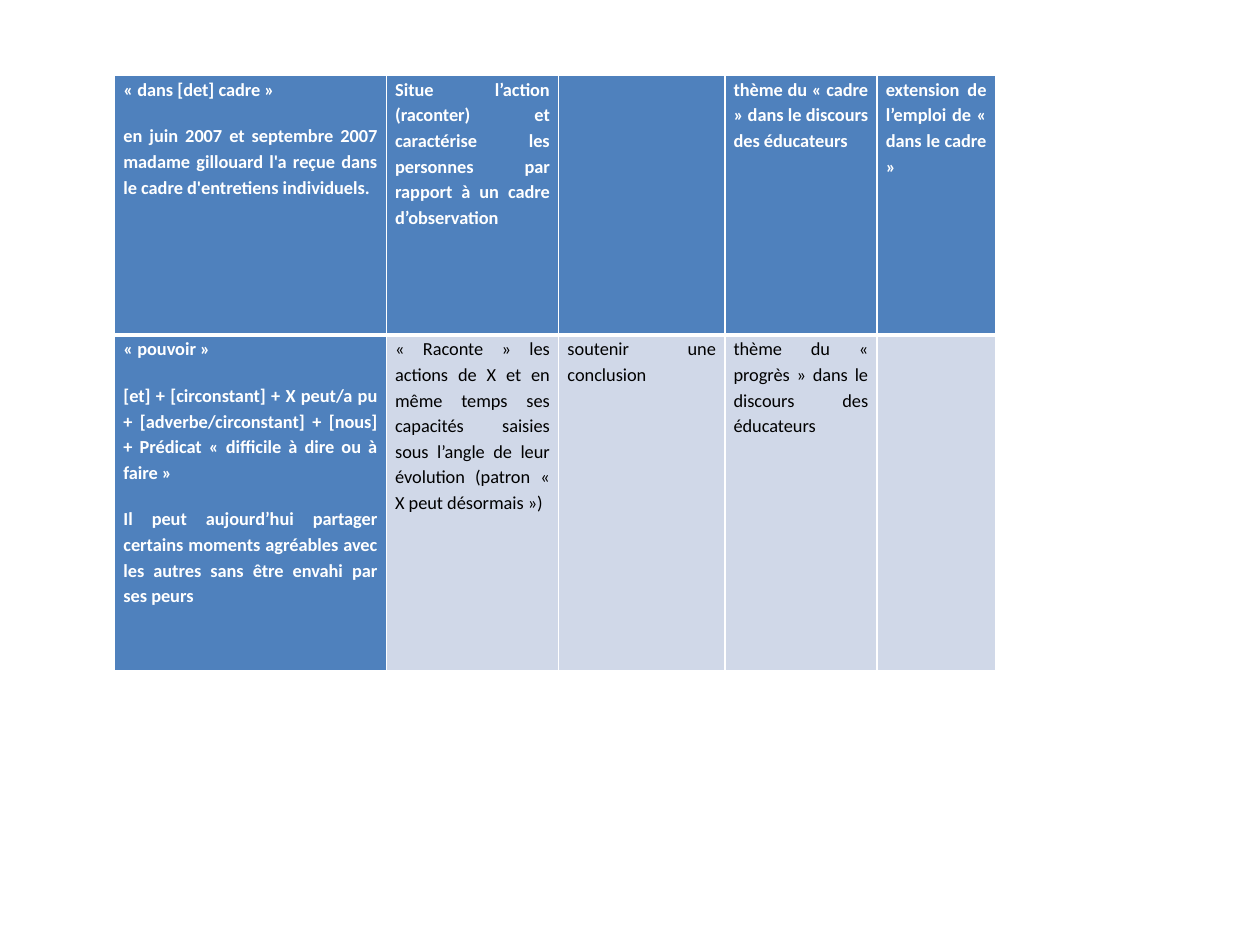
from lxml import etree
from pptx import Presentation
from pptx import util as u
from pptx.dml import color
from pptx.enum import text
from pptx.oxml import ns

BLUE, PALE, WHITE, BLACK = "4F81BD", "D0D8E8", "FFFFFF", "000000"
COLUMN_WIDTHS = [2.16, 1.37, 1.32, 1.21, 0.94]
ROW_HEIGHTS = [2.06, 2.66]
PATTERNS = [
    [
        "« dans [det] cadre »\n"
        "en juin 2007 et septembre 2007 madame gillouard l'a reçue dans le cadre "
        "d'entretiens individuels.",
        "Situe l’action (raconter) et caractérise les personnes par rapport à un "
        "cadre d’observation",
        "",
        "thème du « cadre » dans le discours des éducateurs",
        "extension de l’emploi de « dans le cadre »",
    ],
    [
        "« pouvoir »\n"
        "[et] + [circonstant] + X peut/a pu + [adverbe/circonstant] + [nous] + "
        "Prédicat « difficile à dire ou à faire »\n"
        "Il peut aujourd’hui partager certains moments agréables avec les autres "
        "sans être envahi par ses peurs",
        "« Raconte » les actions de X et en même temps ses capacités saisies sous "
        "l’angle de leur évolution (patron « X peut désormais »)",
        "soutenir une conclusion",
        "thème du « progrès » dans le discours des éducateurs",
        "",
    ],
]


def rgb(value):
    return color.RGBColor.from_string(value)


def set_borders(cell, top, bottom):
    properties = cell._tc.get_or_add_tcPr()
    for side, points in (("L", 1), ("R", 1), ("T", top), ("B", bottom)):
        line = etree.SubElement(properties, ns.qn(f"a:ln{side}"), w=str(u.Pt(points)))
        fill = etree.SubElement(line, ns.qn("a:solidFill"))
        etree.SubElement(fill, ns.qn("a:srgbClr"), val=WHITE)


def write_cell(cell, wording, is_heading):
    cell.fill.solid()
    cell.fill.fore_color.rgb = rgb(BLUE if is_heading else PALE)
    cell.margin_left = cell.margin_right = u.Inches(0.07)
    cell.margin_top = cell.margin_bottom = 0
    cell.text_frame.text = wording
    for paragraph in cell.text_frame.paragraphs:
        paragraph.alignment = text.PP_ALIGN.JUSTIFY
        paragraph.line_spacing = 1.15
        paragraph.space_before = paragraph.space_after = u.Pt(6)
        for run in paragraph.runs:
            run.font.name = "Calibri"
            run.font.size = u.Pt(10.5)
            run.font.bold = is_heading
            run.font.color.rgb = rgb(WHITE if is_heading else BLACK)


def add_pattern_table(slide, left, top, width, height):
    table = slide.shapes.add_table(
        len(ROW_HEIGHTS), len(COLUMN_WIDTHS), left, top, width, height
    ).table
    table.first_col = True
    table.horz_banding = False
    for column, share in zip(table.columns, COLUMN_WIDTHS):
        column.width = int(width * share / sum(COLUMN_WIDTHS))
    for row, share in zip(table.rows, ROW_HEIGHTS):
        row.height = int(height * share / sum(ROW_HEIGHTS))
    for r, pattern in enumerate(PATTERNS):
        for c, wording in enumerate(pattern):
            cell = table.cell(r, c)
            set_borders(cell, top=3 if r == 1 else 1, bottom=3 if r == 0 else 1)
            write_cell(cell, wording, is_heading=r == 0 or c == 0)


def main():
    deck = Presentation()
    deck.slide_width, deck.slide_height = u.Inches(10), u.Inches(7.5)
    slide = deck.slides.add_slide(deck.slide_layouts[6])
    add_pattern_table(slide, u.Inches(0.91), u.Inches(0.6), u.Inches(6.99), u.Inches(4.72))
    deck.save("out.pptx")


if __name__ == "__main__":
    main()
